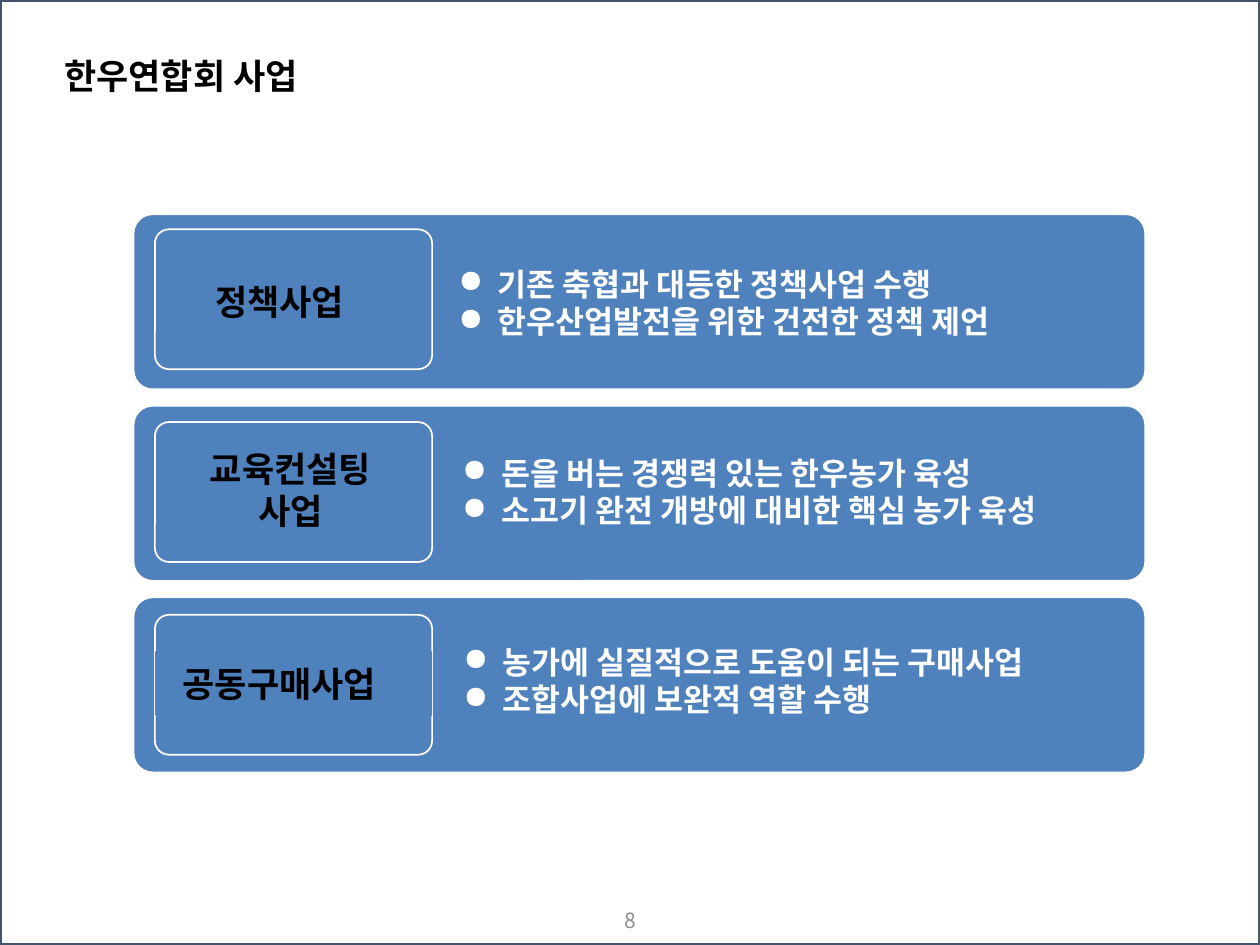
from lxml import etree
from pptx import Presentation, util as u
from pptx.dml.color import RGBColor
from pptx.enum import shapes, text
from pptx.oxml.ns import qn

# Content
TITLE = "한우연합회 사업"
PAGE = "8"
# label lines, label box, bullet lines, bullet box
ROWS = [
    (["정책사업"], (1.61, 2.14, 1.35, 0.51),
     ["기존 축협과 대등한 정책사업 수행", "한우산업발전을 위한 건전한 정책 제언"],
     (3.54, 1.93, 5.21, 0.94)),
    (["교육컨설팅", "사업"], (1.33, 3.59, 1.95, 0.59),
     ["돈을 버는 경쟁력 있는 한우농가 육성", "소고기 완전 개방에 대비한 핵심 농가 육성"],
     (3.57, 3.43, 5.37, 0.94)),
    (["공동구매사업"], (1.23, 5.17, 2.2, 0.51),
     ["농가에 실질적으로 도움이 되는 구매사업", "조합사업에 보완적 역할 수행"],
     (3.58, 4.93, 5.21, 0.94)),
]
FONT = "Noto Sans CJK KR"
BLUE, WHITE, BLACK = "4F81BD", "FFFFFF", "000000"
LEFT, MID = text.PP_ALIGN.LEFT, text.PP_ALIGN.CENTER
RECT = shapes.MSO_SHAPE.RECTANGLE
ROUND = shapes.MSO_SHAPE.ROUNDED_RECTANGLE
WIDE, HIGH = 10, 7.5

prs = Presentation()
prs.slide_width, prs.slide_height = u.Inches(WIDE), u.Inches(HIGH)
slide = prs.slides.add_slide(prs.slide_layouts[6])


def paint(part, color):
    part.solid()
    part.fore_color.rgb = RGBColor.from_string(color)


def add_box(kind, box, line, width, fill=None, adj=None):
    shape = slide.shapes.add_shape(kind, *map(u.Inches, box))
    shape.shadow.inherit = False
    if fill:
        paint(shape.fill, fill)
    else:
        shape.fill.background()
    paint(shape.line.fill, line)
    shape.line.width = u.Pt(width)
    if adj:
        shape.adjustments[0] = adj


def add_text(lines, box, size=20, color=BLACK, bold=True, align=LEFT,
             fill=None, inset=0.1, bullet=None, space=1.0):
    shape = slide.shapes.add_textbox(*map(u.Inches, box))
    if fill:
        paint(shape.fill, fill)
    frame = shape.text_frame
    frame.word_wrap = True
    frame.vertical_anchor = text.MSO_ANCHOR.MIDDLE
    frame.margin_left = u.Inches(inset)
    for i, line in enumerate(lines):
        para = frame.add_paragraph() if i else frame.paragraphs[0]
        para.alignment, para.line_spacing = align, space
        if bullet:
            props = para._p.get_or_add_pPr()
            props.set("marL", str(u.Inches(0.31)))
            props.set("indent", str(-u.Inches(0.31)))
            etree.SubElement(props, qn("a:buChar")).set("char", bullet)
        run = para.add_run()
        run.text = line
        font = run.font
        font.name, font.size, font.bold = FONT, u.Pt(size), bold
        paint(font.fill, color)
        # Korean glyphs take the East Asian font
        etree.SubElement(run._r.get_or_add_rPr(), qn("a:ea")).set("typeface", FONT)


# Page number, title and frame
add_text([PAGE], (3.88, 7.1, 2.25, 0.4), size=12, color="8C8C8C",
         bold=False, align=MID)
add_text([TITLE], (0.35, 0.41, 7.56, 0.42), inset=0.16, space=0.9)
add_box(RECT, (0, 0, WIDE, HIGH), "44546A", 2.25)

# One card per business: card, tile, label, bullets
for i, (label, spot, points, area) in enumerate(ROWS):
    add_box(ROUND, (1.06, 1.7 + 1.52 * i, 8.03, 1.39), WHITE, 1, BLUE, 0.11)
    add_box(ROUND, (1.23, 1.82 + 1.53 * i, 2.2, 1.11), WHITE, 1, BLUE, 0.1)
    full = spot[2] == 2.2
    add_text(label, spot, align=MID if len(label) > 1 else LEFT,
             fill=BLUE, inset=0.22 if full else 0.1)
    add_text(points, area, size=18, color=WHITE, fill=BLUE, bullet="●")

prs.save("out.pptx")
